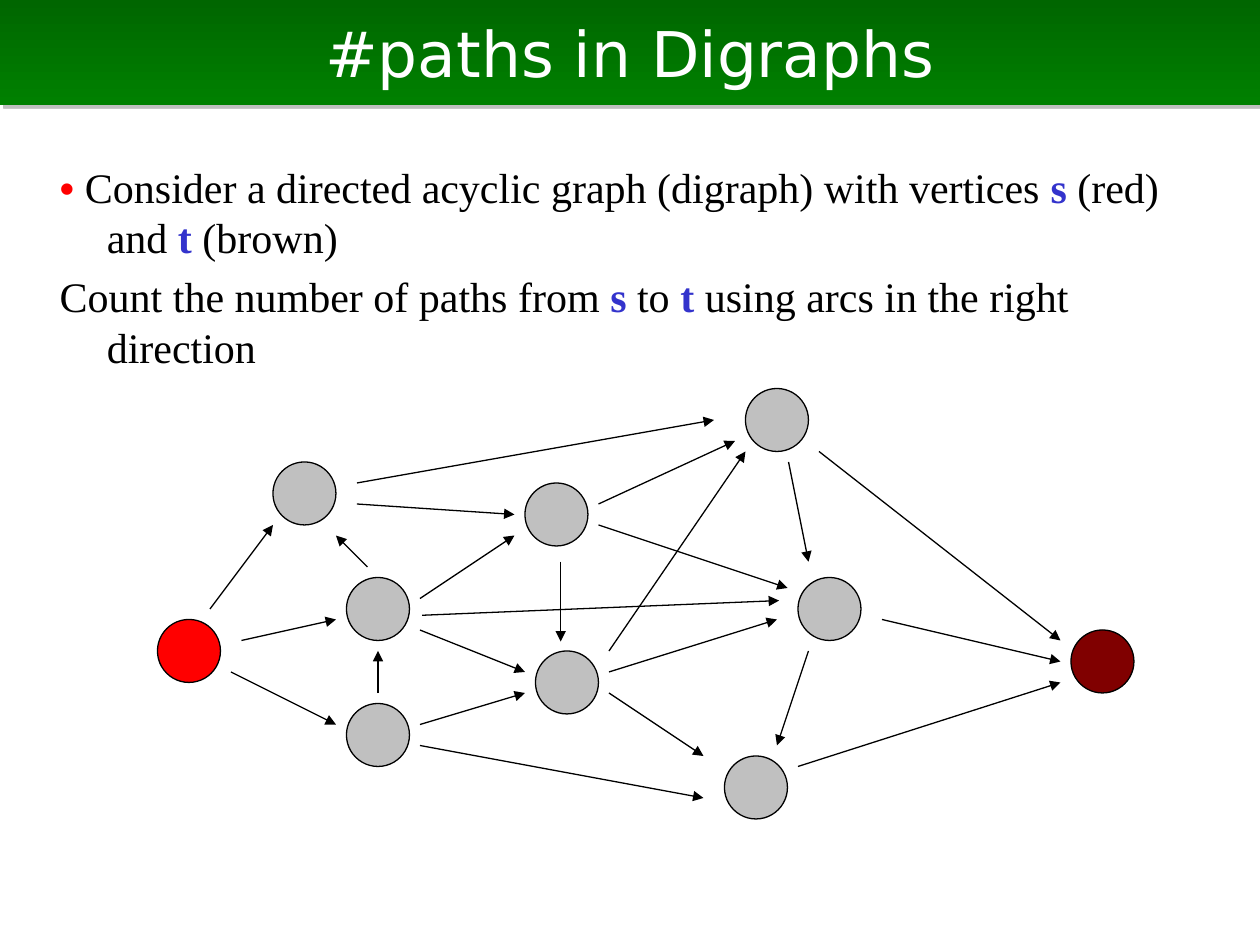
from lxml import etree
from pptx import Presentation
from pptx import util as u
from pptx.dml.color import RGBColor
from pptx.enum import shapes, text
from pptx.oxml import parse_xml
from pptx.oxml.ns import nsdecls, qn

TITLE = "#paths in Digraphs"
BULLET, PLAIN, VERTEX = ("FF0000", True), ("000000", False), ("3333CC", True)
PARAGRAPHS = [
    [("• ", BULLET),
     ("Consider a directed acyclic graph (digraph) with vertices ", PLAIN),
     ("s", VERTEX), (" (red) and ", PLAIN), ("t", VERTEX), (" (brown)", PLAIN)],
    [("Count the number of paths from ", PLAIN), ("s", VERTEX), (" to ", PLAIN),
     ("t ", VERTEX), ("using arcs in the right direction", PLAIN)],
]

# The graph lies on a grid of twelve steps to the inch.
STEP = u.Cm(2.54) / 12
DIAMETER = 6
GREY, RED, BROWN = "C0C0C0", "FF0000", "800000"
VERTICES = [  # left, top, colour
    (15, 59, RED), (26, 44, GREY), (33, 55, GREY), (33, 67, GREY),
    (50, 46, GREY), (51, 62, GREY), (71, 37, GREY), (76, 55, GREY),
    (69, 72, GREY), (102, 60, BROWN),
]
ARCS = [  # start x, y, end x, y
    (20, 58, 26, 50), (23, 61, 32, 59), (22, 64, 32, 69),
    (36, 66, 36, 62), (35, 54, 32, 51),
    (34, 46, 68, 40), (34, 48, 49, 49),
    (40, 57, 49, 51), (40.2, 58.6, 74.2, 57.2), (40, 60, 50, 64),
    (40, 69, 50, 66), (40, 71, 67, 76),
    (57, 48, 70, 42), (57, 50, 75, 56), (53.4, 53.5, 53.4, 61.1),
    (58, 62, 71, 43), (58, 64, 74, 59), (58, 66, 67, 72),
    (75.1, 44, 77, 53.5), (77, 62, 74, 71),
    (78, 43, 101, 61), (84, 59, 101, 63), (76, 73, 101, 65),
]


def colour(value):
    return RGBColor.from_string(value)


def grid(*steps):
    return [round(step * STEP) for step in steps]


def place(shape, left, top, width, height):
    box = dict(left=left, top=top, width=width, height=height)
    for side, length in box.items():
        setattr(shape, side, u.Cm(length))


def add_run(paragraph, words, font_name, size, shade, bold=False):
    run = paragraph.add_run()
    run.text = words
    for key, value in dict(name=font_name, size=u.Pt(size), bold=bold).items():
        setattr(run.font, key, value)
    run.font.color.rgb = colour(shade)


def outline(line):
    line.color.rgb = colour("000000")
    line.width = u.Pt(0.75)


def fill_title(title):
    place(title, 0, 0, 25.4, 2.11)
    title.fill.gradient()
    title.fill.gradient_angle = 270
    for stop, shade in zip(title.fill.gradient_stops, ("006600", "008000")):
        stop.color.rgb = colour(shade)
    title._element.spPr.append(parse_xml(
        f'<a:effectLst {nsdecls("a")}>'
        '<a:outerShdw dist="35560" dir="2700000" algn="ctr" rotWithShape="0">'
        '<a:srgbClr val="808080"><a:alpha val="50000"/></a:srgbClr>'
        '</a:outerShdw></a:effectLst>'))
    frame = title.text_frame
    frame.auto_size = text.MSO_AUTO_SIZE.NONE
    frame.vertical_anchor = text.MSO_ANCHOR.MIDDLE
    frame.paragraphs[0].alignment = text.PP_ALIGN.CENTER
    add_run(frame.paragraphs[0], TITLE, "DejaVu Sans", 36, "FFFFFF")


def fill_body(body):
    place(body, 0.95, 3.13, 23.5, 3.6)
    frame = body.text_frame
    frame.auto_size = text.MSO_AUTO_SIZE.NONE
    for index, runs in enumerate(PARAGRAPHS):
        paragraph = frame.add_paragraph() if index else frame.paragraphs[0]
        properties = paragraph._p.get_or_add_pPr()
        properties.set("marL", str(u.Cm(0.95)))
        properties.set("indent", str(u.Cm(-0.95)))
        etree.SubElement(properties, qn("a:buNone"))
        for words, (shade, bold) in runs:
            add_run(paragraph, words, "Times New Roman", 24, shade, bold)


def add_vertex(slide, left, top, shade):
    vertex = slide.shapes.add_shape(
        shapes.MSO_SHAPE.OVAL, *grid(left, top, DIAMETER, DIAMETER))
    vertex.shadow.inherit = False
    vertex.fill.solid()
    vertex.fill.fore_color.rgb = colour(shade)
    outline(vertex.line)


def add_arc(slide, *ends):
    arc = slide.shapes.add_connector(shapes.MSO_CONNECTOR.STRAIGHT, *grid(*ends))
    outline(arc.line)
    etree.SubElement(arc.line._get_or_add_ln(), qn("a:tailEnd"), type="triangle")
    etree.SubElement(arc._element.spPr, qn("a:effectLst"))


def main():
    deck = Presentation()
    deck.slide_width, deck.slide_height = u.Cm(25.4), u.Cm(19.05)
    slide = deck.slides.add_slide(deck.slide_layouts[1])
    fill_title(slide.shapes.title)
    fill_body(slide.placeholders[1])
    for arc in ARCS:
        add_arc(slide, *arc)
    for vertex in VERTICES:
        add_vertex(slide, *vertex)
    deck.save("out.pptx")


if __name__ == "__main__":
    main()
